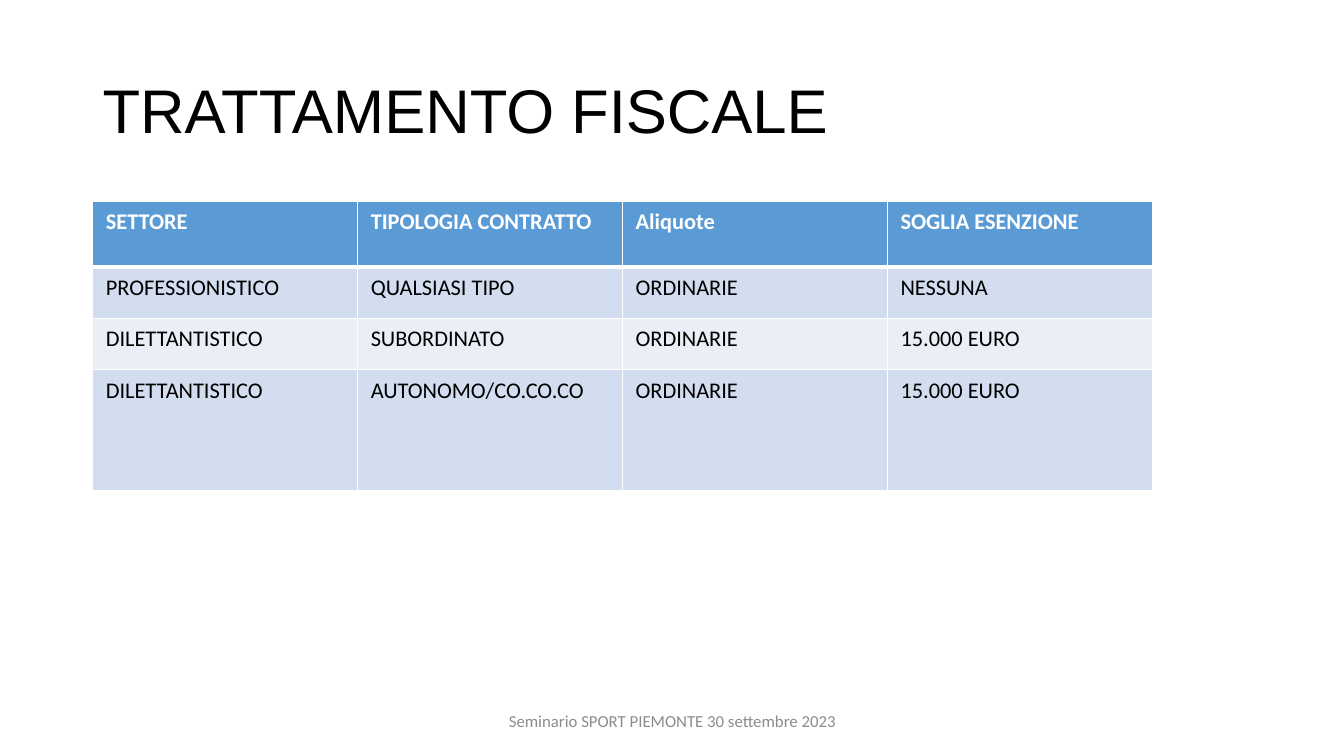
import pptx
import pptx.dml.color
import pptx.enum.text
import pptx.oxml
import pptx.oxml.ns
import pptx.util
from pptx.util import Inches

ALIGN = pptx.enum.text.PP_ALIGN
MIDDLE = pptx.enum.text.MSO_ANCHOR.MIDDLE

ROWS = [
    ["SETTORE", "TIPOLOGIA CONTRATTO", "Aliquote", "SOGLIA ESENZIONE"],
    ["PROFESSIONISTICO", "QUALSIASI TIPO", "ORDINARIE", "NESSUNA"],
    ["DILETTANTISTICO", "SUBORDINATO", "ORDINARIE", "15.000 EURO"],
    ["DILETTANTISTICO", "AUTONOMO/CO.CO.CO", "ORDINARIE", "15.000 EURO"],
]
ROW_HEIGHTS = [0.65, 0.51, 0.51, 1.2]


def rgb(color):
    return pptx.dml.color.RGBColor.from_string(color)


def write(tf, text, size, color="000000", font="Calibri", bold=False,
          align=ALIGN.LEFT, spacing=None):
    p = tf.paragraphs[0]
    p.alignment = align
    p.line_spacing = spacing
    r = p.add_run()
    r.text = text
    r.font.name = font
    r.font.size = pptx.util.Pt(size)
    r.font.bold = bold
    r.font.color.rgb = rgb(color)


class Slide:
    header_fill = "5B9BD5"
    band_fills = ["EAEFF7", "D2DEEF"]
    border = "FFFFFF"

    def __init__(self, prs):
        self.s = prs.slides.add_slide(prs.slide_layouts[6])

    def text(self, x, y, w, h, text, **fmt):
        sp = self.s.shapes.add_textbox(Inches(x), Inches(y), Inches(w), Inches(h))
        tf = sp.text_frame
        tf.word_wrap = True
        tf.vertical_anchor = MIDDLE
        write(tf, text, **fmt)

    def table(self, x, y, w, rows, heights):
        shape = self.s.shapes.add_table(
            len(rows), len(rows[0]), Inches(x), Inches(y), Inches(w), Inches(sum(heights)))
        table = shape.table
        for i, row in enumerate(rows):
            table.rows[i].height = Inches(heights[i])
            for j, text in enumerate(row):
                self.cell(table.cell(i, j), i, text)

    def cell(self, cell, row, text):
        header = row == 0
        cell.margin_left = cell.margin_right = Inches(0.13)
        cell.margin_top = cell.margin_bottom = Inches(0.07)
        write(cell.text_frame, text, 16, "FFFFFF" if header else "000000", bold=header)
        self.borders(cell, top=3 if row == 1 else 1, bottom=3 if header else 1)
        cell.fill.solid()
        cell.fill.fore_color.rgb = rgb(self.header_fill if header else self.band_fills[row % 2])

    def borders(self, cell, top, bottom):
        """Draw the four sides; top and bottom are widths in points."""
        tcPr = cell._tc.get_or_add_tcPr()
        for side, width in zip("LRTB", (1, 1, top, bottom)):
            tcPr.append(pptx.oxml.parse_xml(
                f'<a:ln{side} {pptx.oxml.ns.nsdecls("a")} w="{pptx.util.Pt(width)}">'
                f'<a:solidFill><a:srgbClr val="{self.border}"/></a:solidFill></a:ln{side}>'))


def main():
    prs = pptx.Presentation()
    prs.slide_width = Inches(13.33)
    prs.slide_height = Inches(7.5)
    slide = Slide(prs)
    slide.text(0.92, 0.4, 11.5, 1.45, "TRATTAMENTO FISCALE",
               size=44, font="Arial", spacing=0.9)
    slide.table(0.92, 2, 10.51, ROWS, ROW_HEIGHTS)
    slide.text(4.42, 6.95, 4.5, 0.4, "Seminario SPORT PIEMONTE 30 settembre 2023",
               size=12, color="8C8C8C", align=ALIGN.CENTER)
    prs.save("out.pptx")


if __name__ == "__main__":
    main()
